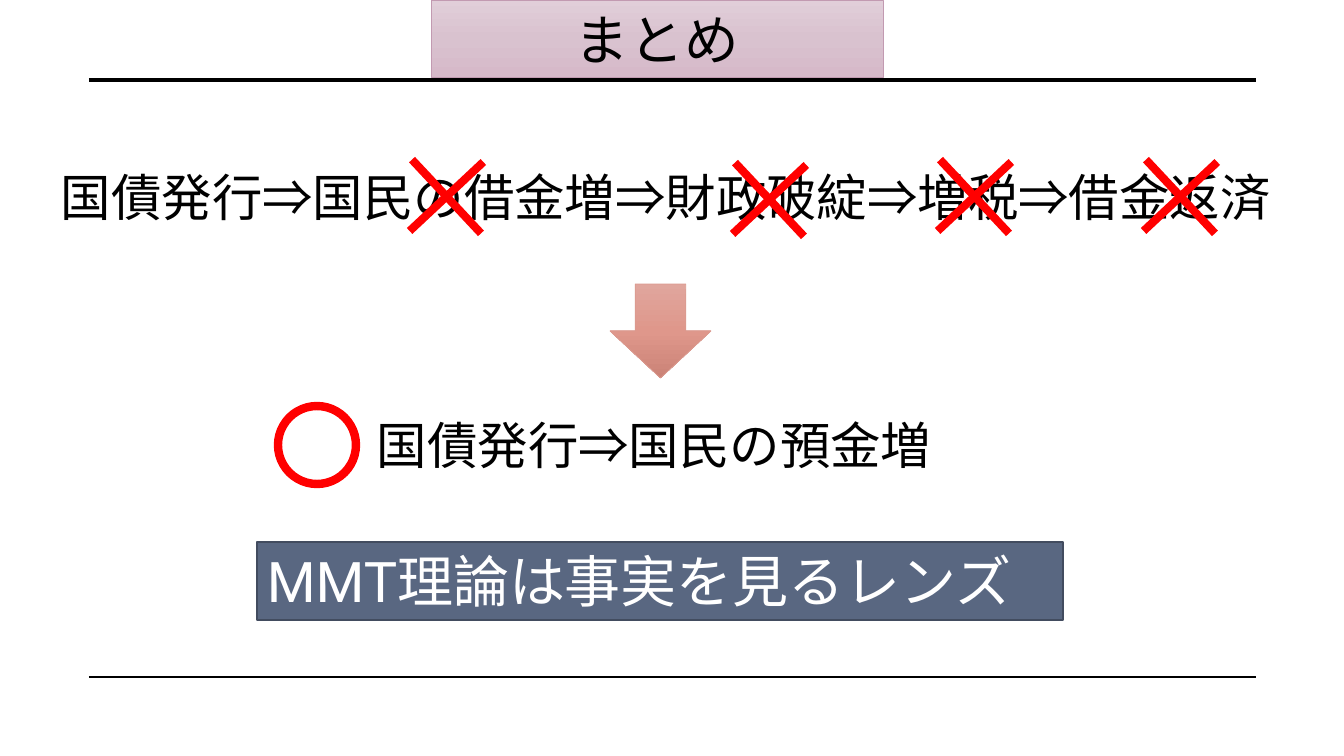
"""Build the summary slide on government bonds and the MMT lens."""
from copy import deepcopy

from pptx import Presentation
from pptx.dml.color import RGBColor
from pptx.enum.shapes import MSO_CONNECTOR, MSO_SHAPE
from pptx.enum.text import MSO_ANCHOR, MSO_AUTO_SIZE, PP_ALIGN
from pptx.oxml.ns import qn
from pptx.util import Pt
from lxml import etree

RECTANGLE = MSO_SHAPE.RECTANGLE
DOWN_ARROW = MSO_SHAPE.DOWN_ARROW
CROSS = MSO_SHAPE.CROSS
OVAL = MSO_SHAPE.OVAL
STRAIGHT = MSO_CONNECTOR.STRAIGHT
LEFT, CENTER = PP_ALIGN.LEFT, PP_ALIGN.CENTER
TOP, MIDDLE = MSO_ANCHOR.TOP, MSO_ANCHOR.MIDDLE
GROW = MSO_AUTO_SIZE.SHAPE_TO_FIT_TEXT

BLACK = RGBColor(0x00, 0x00, 0x00)
WHITE = RGBColor(0xFF, 0xFF, 0xFF)
RED = RGBColor(0xFF, 0x00, 0x00)
SLATE = RGBColor(0x59, 0x67, 0x81)
SLATE_EDGE = RGBColor(0x42, 0x4C, 0x5F)
MAUVE_EDGE = RGBColor(0xC2, 0x9A, 0xB1)
MAUVES = [RGBColor(0xE1, 0xCE, 0xD9), RGBColor(0xD9, 0xC2, 0xCF), RGBColor(0xD6, 0xB9, 0xC9)]
CORAL_EDGE = RGBColor(0xDB, 0x9A, 0x8F)
CORALS = [RGBColor(0xE0, 0xA6, 0x9D), RGBColor(0xDF, 0x97, 0x8B), RGBColor(0xCB, 0x83, 0x77)]

FONT = "Roboto"
TITLE = ("まとめ", (431, 0, 452, 77))
STATEMENTS = [
    ("国債発行⇒国民の借金増⇒財政破綻⇒増税⇒借金返済", (51, 161, 1242, 72)),
    ("国債発行⇒国民の預金増", (367, 409, 581, 72)),
]
CONCLUSION = ("MMT理論は事実を見るレンズ", (257, 542, 806, 78))
ARROW_BOX = (610, 284, 101, 94)
CIRCLE_BOX = (278, 406, 78, 78)
RULES = [(80, 3.5), (677, 1)]
RULE_LEFT, RULE_RIGHT = 89, 1256
CROSS_CORNERS = [(396, 146), (719, 149), (924, 146), (1130, 146)]
CROSS_SIZE = 101
EMU_PER_PX = 914400 / 100.8


def px(*lengths):
    return [round(length * EMU_PER_PX) for length in lengths]


def add_rule(slide, y, weight):
    rule = slide.shapes.add_connector(STRAIGHT, *px(RULE_LEFT, y, RULE_RIGHT, y))
    rule.line.color.rgb = BLACK
    rule.line.width = Pt(weight)
    etree.SubElement(rule._element.spPr, qn("a:effectLst"))


def add_shape(slide, kind, box, fill=None, edge=None, weight=0):
    shape = slide.shapes.add_shape(kind, *px(*box))
    shape.shadow.inherit = False
    if isinstance(fill, list):
        fill_gradient(shape, fill)
    elif fill is None:
        shape.fill.background()
    else:
        shape.fill.solid()
        shape.fill.fore_color.rgb = fill
    if edge is None:
        shape.line.fill.background()
    else:
        shape.line.color.rgb = edge
        shape.line.width = Pt(weight)
    return shape


def fill_gradient(shape, colors):
    shape.fill.gradient()
    shape.fill.gradient_angle = 270
    stop_list = shape._element.spPr.find(".//" + qn("a:gsLst"))
    stop_list.insert(1, deepcopy(stop_list[0]))
    for index, (stop, color) in enumerate(zip(shape.fill.gradient_stops, colors)):
        stop.position = index / (len(colors) - 1)
        stop.color.rgb = color


def write(shape, text, size, color=BLACK, align=LEFT, anchor=TOP, wrap=True):
    frame = shape.text_frame
    frame.word_wrap = wrap
    frame.vertical_anchor = anchor
    paragraph = frame.paragraphs[0]
    paragraph.alignment = align
    run = paragraph.add_run()
    run.text = text
    run.font.name = FONT
    run.font.size = Pt(size)
    run.font.color.rgb = color
    return run


def main():
    presentation = Presentation()
    presentation.slide_width, presentation.slide_height = px(1344, 756)
    slide = presentation.slides.add_slide(presentation.slide_layouts[6])

    for y, weight in RULES:
        add_rule(slide, y, weight)

    text, box = TITLE
    banner = add_shape(slide, RECTANGLE, box, MAUVES, MAUVE_EDGE, 0.5)
    title_run = write(banner, text, 39, align=CENTER, anchor=MIDDLE)
    title_run.font._element.set("spc", "30")

    for text, box in STATEMENTS:
        statement = slide.shapes.add_textbox(*px(*box))
        write(statement, text, 36, wrap=False)
        statement.text_frame.auto_size = GROW

    add_shape(slide, DOWN_ARROW, ARROW_BOX, CORALS, CORAL_EDGE, 0.5)

    text, box = CONCLUSION
    conclusion = add_shape(slide, RECTANGLE, box, SLATE, SLATE_EDGE, 1)
    write(conclusion, text, 40, WHITE)
    conclusion.text_frame.auto_size = GROW

    for left, top in CROSS_CORNERS:
        cross = add_shape(slide, CROSS, (left, top, CROSS_SIZE, CROSS_SIZE), RED)
        cross.adjustments[0] = 0.46
        cross.rotation = 46.9

    add_shape(slide, OVAL, CIRCLE_BOX, edge=RED, weight=6)
    presentation.save("out.pptx")


if __name__ == "__main__":
    main()
